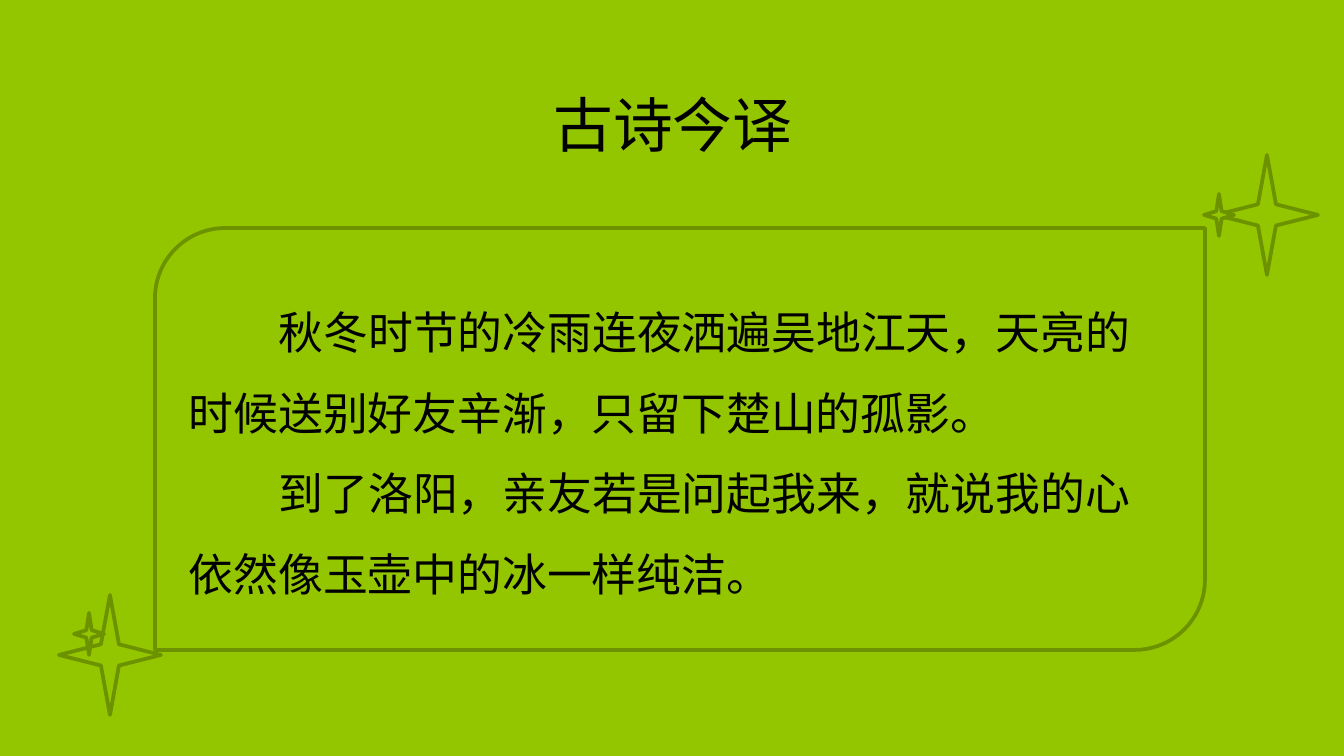
from pptx import Presentation
from pptx.dml.color import RGBColor
from pptx.enum.shapes import MSO_SHAPE as Shape
from pptx.enum.text import MSO_ANCHOR as Anchor, MSO_AUTO_SIZE as AutoSize, PP_ALIGN as Align
from pptx.util import Emu, Pt

LIME = RGBColor(0x94, 0xC6, 0x00)
OLIVE = RGBColor(0x6D, 0x92, 0x00)
BLACK = RGBColor(0x00, 0x00, 0x00)

PX_PER_INCH = 134.4
SLIDE_SIZE = (1344, 756)
FIRST_LINE_INDENT = 90

TRANSLATION = (
    "秋冬时节的冷雨连夜洒遍吴地江天，天亮的时候送别好友辛渐，只留下楚山的孤影。",
    "到了洛阳，亲友若是问起我来，就说我的心依然像玉壶中的冰一样纯洁。",
)

LARGE_STAR = (102, 120)
SMALL_STAR = (30, 42)
STARS = (
    (1216, 155, LARGE_STAR),
    (1204, 194, SMALL_STAR),
    (59, 595, LARGE_STAR),
    (74, 613, SMALL_STAR),
)


def px(*lengths):
    """Turn pixel lengths into EMU."""
    return [Emu(round(length * 914400 / PX_PER_INCH)) for length in lengths]


class PoemSlide:
    """Holds the shared style and the slide being drawn."""

    font_name = "Calibri"
    line_width = Pt(2)

    def __init__(self, slide):
        self.slide = slide
        slide.background.fill.solid()
        slide.background.fill.fore_color.rgb = LIME

    def style_paragraph(self, paragraph, size, align):
        paragraph.alignment = align
        paragraph.font.name = self.font_name
        paragraph.font.size = Pt(size)
        paragraph.font.color.rgb = BLACK

    def title(self, text, left, top, width, height):
        heading = self.slide.shapes.add_textbox(*px(left, top, width, height))
        frame = heading.text_frame
        frame.word_wrap = True
        frame.auto_size = AutoSize.SHAPE_TO_FIT_TEXT
        frame.text = text
        self.style_paragraph(frame.paragraphs[0], 32, Align.CENTER)

    def outline(self, preset, left, top, width, height):
        outlined = self.slide.shapes.add_shape(preset, *px(left, top, width, height))
        outlined.shadow.inherit = False
        outlined.line.color.rgb = OLIVE
        outlined.line.width = self.line_width
        return outlined

    def verse_panel(self, verses, left, top, width, height):
        panel = self.outline(Shape.ROUND_2_DIAG_RECTANGLE, left, top, width, height)
        panel.fill.background()
        frame = panel.text_frame
        frame.word_wrap = True
        frame.vertical_anchor = Anchor.MIDDLE
        frame.text = "\n".join(verses)
        indent = px(FIRST_LINE_INDENT)[0]
        for paragraph in frame.paragraphs:
            self.style_paragraph(paragraph, 24, Align.LEFT)
            paragraph.line_spacing = 1.5
            properties = paragraph._p.get_or_add_pPr()
            properties.set("marL", "0")
            properties.set("indent", str(int(indent)))

    def star(self, left, top, size):
        sparkle = self.outline(Shape.STAR_4_POINT, left, top, *size)
        sparkle.fill.solid()
        sparkle.fill.fore_color.rgb = LIME


def main():
    deck = Presentation()
    deck.slide_width, deck.slide_height = px(*SLIDE_SIZE)
    poem = PoemSlide(deck.slides.add_slide(deck.slide_layouts[6]))

    poem.title("古诗今译", 488, 81, 370, 86)
    poem.verse_panel(TRANSLATION, 155, 228, 1050, 422)
    for left, top, size in STARS:
        poem.star(left, top, size)

    deck.save("out.pptx")


if __name__ == "__main__":
    main()
